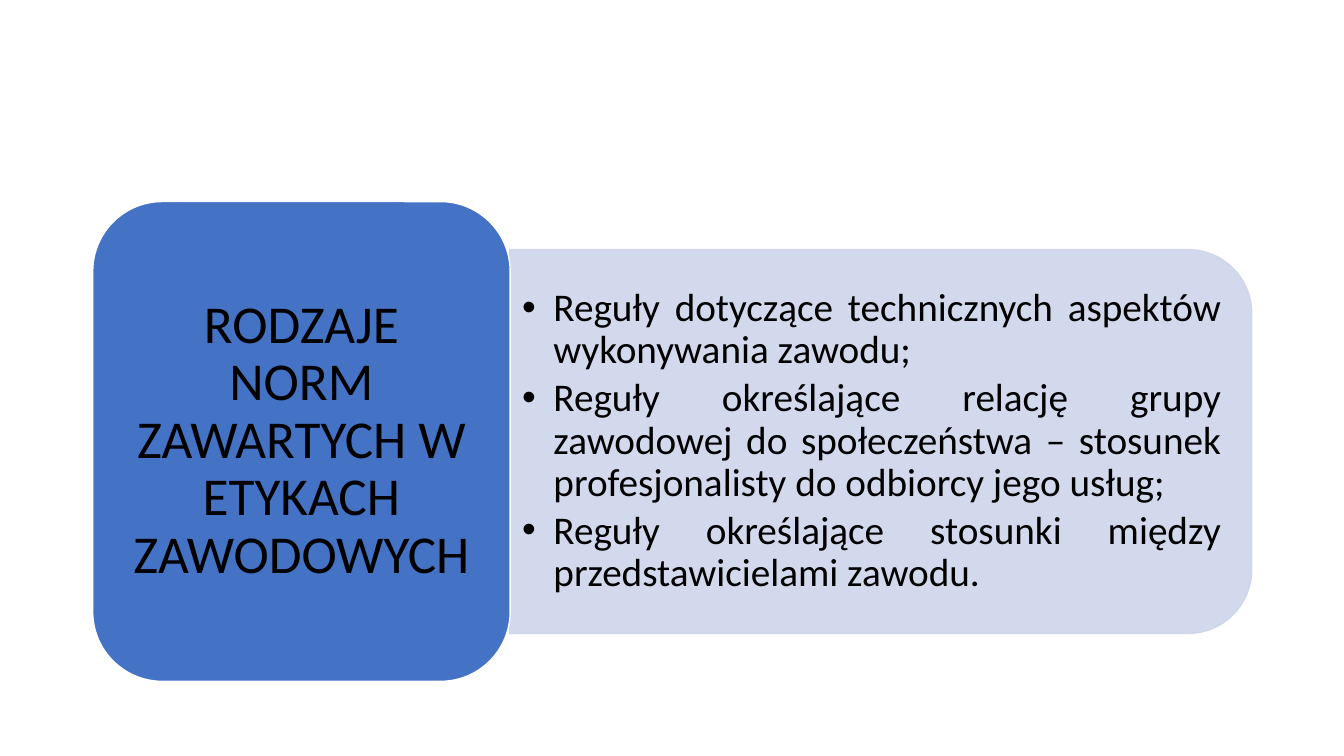
from lxml import etree
from pptx import Presentation
from pptx.dml.color import RGBColor
from pptx.enum.shapes import MSO_SHAPE as Preset
from pptx.enum.text import MSO_ANCHOR as Anchor, PP_ALIGN as Align
from pptx.oxml.ns import qn
from pptx.util import Inches, Pt

NORM_TYPES = [
    "Reguły dotyczące technicznych aspektów wykonywania zawodu;",
    "Reguły określające relację grupy zawodowej do społeczeństwa – stosunek "
    "profesjonalisty do odbiorcy jego usług;",
    "Reguły określające stosunki między przedstawicielami zawodu.",
]
HEADING = "RODZAJE NORM ZAWARTYCH W ETYKACH ZAWODOWYCH"


def paint(fill, color, opacity=100):
    fill.solid()
    fill.fore_color.rgb = RGBColor.from_string(color)
    if opacity < 100:
        tint = fill._xPr.find(qn("a:solidFill"))[0]
        etree.SubElement(tint, qn("a:alpha"), val=str(opacity * 1000))


def add_panel(slide, preset, box, fill, line, opacity=100, rotation=0):
    panel = slide.shapes.add_shape(preset, *map(Inches, box))
    panel.shadow.inherit = False
    panel.rotation = rotation
    panel.line.width = Pt(1)
    paint(panel.fill, fill, opacity)
    paint(panel.line.fill, line, opacity)


def add_bullet(paragraph, indent):
    props = paragraph._p.get_or_add_pPr()
    props.set("marL", str(Inches(indent)))
    props.set("indent", str(-Inches(indent)))
    etree.SubElement(props, qn("a:buFont"), typeface="Arial")
    etree.SubElement(props, qn("a:buChar"), char="•")


def add_text(slide, box, lines, size, inset, paragraph_format, bullet_indent=0):
    frame = slide.shapes.add_textbox(*map(Inches, box)).text_frame
    frame_format = {
        "word_wrap": True,
        "vertical_anchor": Anchor.MIDDLE,
        "margin_left": Inches(inset),
        "margin_right": Inches(inset),
        "margin_top": Inches(inset / 2),
        "margin_bottom": Inches(inset / 2),
    }
    for name, value in frame_format.items():
        setattr(frame, name, value)

    for index, line in enumerate(lines):
        paragraph = frame.add_paragraph() if index else frame.paragraphs[0]
        for name, value in {"line_spacing": 0.9, **paragraph_format}.items():
            setattr(paragraph, name, value)
        if bullet_indent:
            add_bullet(paragraph, bullet_indent)
        run = paragraph.add_run()
        run.text = line
        for name, value in {"name": "Calibri", "size": Pt(size)}.items():
            setattr(run.font, name, value)
        paint(run.font.fill, "000000")


def main():
    deck = Presentation()
    deck.slide_width, deck.slide_height = Inches(13.33), Inches(7.5)
    slide = deck.slides.add_slide(deck.slide_layouts[6])

    # List of norm types, on a panel turned to round its right corners
    add_panel(slide, Preset.ROUND_2_SAME_RECTANGLE, (6.83, 0.7, 3.81, 7.36),
              "CFD5EA", "CFD5EA", opacity=90, rotation=90)
    add_text(slide, (5.06, 2.66, 7.17, 3.44), NORM_TYPES, 28, 0.12,
             {"alignment": Align.JUSTIFY, "level": 1, "space_after": Pt(4)},
             bullet_indent=0.31)

    # Heading block
    add_panel(slide, Preset.ROUNDED_RECTANGLE, (0.92, 2, 4.14, 4.76),
              "4472C4", "FFFFFF")
    add_text(slide, (1.12, 2.2, 3.74, 4.35), [HEADING], 38, 0.16,
             {"alignment": Align.CENTER})

    deck.save("out.pptx")


if __name__ == "__main__":
    main()
